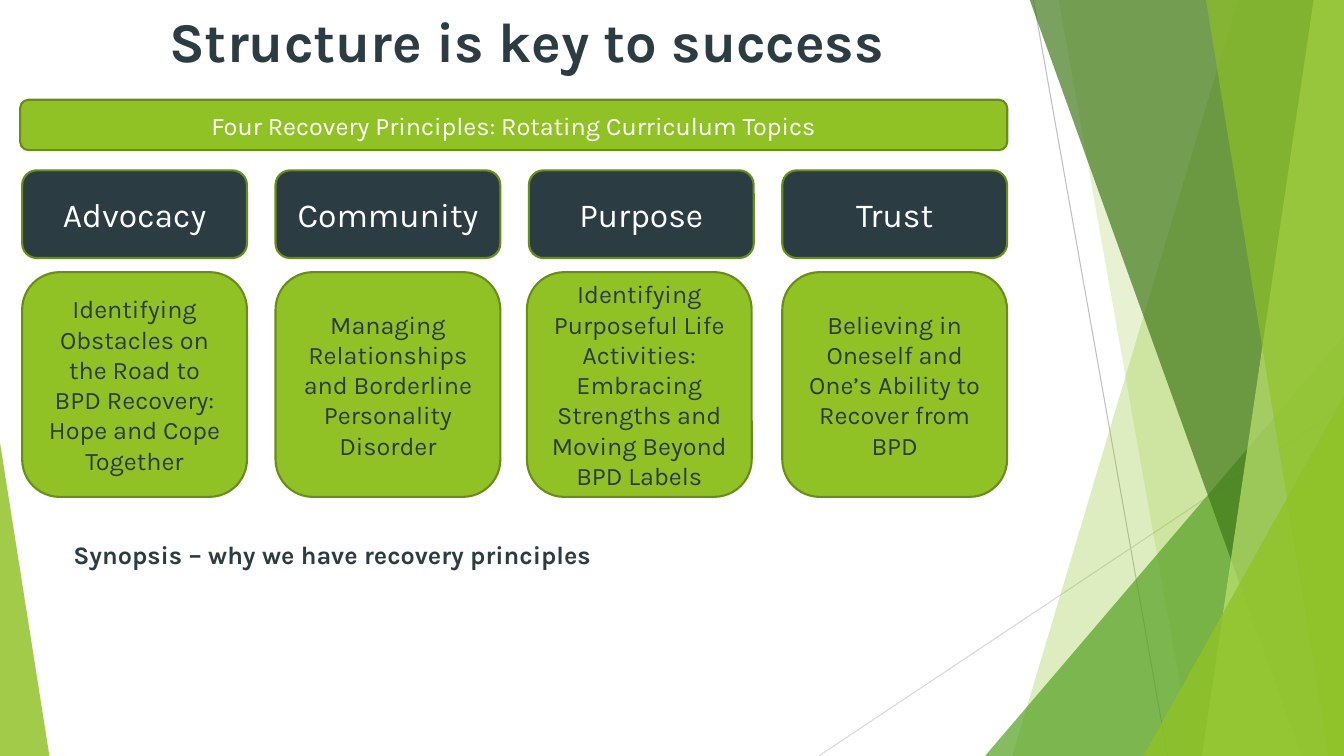
import dataclasses

import lxml.etree
import pptx
import pptx.dml.color
import pptx.enum.shapes
import pptx.enum.text
import pptx.oxml.ns
import pptx.shapes.autoshape
import pptx.shapes.base
import pptx.slide
import pptx.text.text
import pptx.util

SLIDE_WIDTH = pptx.util.Inches(13.33)
SLIDE_HEIGHT = pptx.util.Inches(7.5)
COLUMN = SLIDE_WIDTH / 133.3
ROW = SLIDE_HEIGHT / 75
RIGHT_EDGE = 133.3
TOP_EDGE = -0.1
BOTTOM_EDGE = 75
FIRST_CARD = 2.2
CARD_PITCH = 25.13
CARD_WIDTH = 22.3
FONT = "Karla"
COLORS = {
    "slate": "2C3C43",
    "lime": "90C226",
    "olive": "698D1B",
    "pale": "BFE471",
    "grass": "54A021",
    "forest": "3F7818",
    "white": "FFFFFF",
    "silver": "BFBFBF",
    "mist": "D8D8D8",
}
Shape = pptx.enum.shapes.MSO_SHAPE
Align = pptx.enum.text.PP_ALIGN
Anchor = pptx.enum.text.MSO_ANCHOR


@dataclasses.dataclass(frozen=True)
class Area:
    column: float
    row: float
    columns: float
    rows: float

    def emu(self) -> tuple[int, int, int, int]:
        return (
            round(self.column * COLUMN),
            round(self.row * ROW),
            round(self.columns * COLUMN),
            round(self.rows * ROW),
        )


@dataclasses.dataclass(frozen=True)
class Hairline:
    start: tuple[float, float]
    end: tuple[float, float]
    color: str


@dataclasses.dataclass(frozen=True)
class Band:
    top: float
    bottom: float
    color: str
    opacity: int


@dataclasses.dataclass(frozen=True)
class Wedge:
    area: Area
    apex: float
    color: str
    opacity: int


@dataclasses.dataclass(frozen=True)
class Lettering:
    size: int
    color: str
    bold: bool = False
    align: pptx.enum.text.PP_ALIGN = Align.CENTER
    anchor: pptx.enum.text.MSO_ANCHOR = Anchor.MIDDLE


@dataclasses.dataclass(frozen=True)
class Principle:
    name: str
    topic: str
    topic_shift: float = 0


HAIRLINES = [
    Hairline((102.5, 0), (115.8, 75), "silver"),
    Hairline((133.3, 40.3), (81.2, 75), "mist"),
]
FACETS = [
    Band(122.8, 100.4, "lime", 29),
    Band(105, 118.3, "lime", 20),
    Wedge(Area(97.7, 33.3, 35.6, 41.7), 1, "grass", 71),
    Band(102.1, 129.1, "forest", 69),
    Band(130.3, 119.2, "pale", 69),
    Band(119.6, 131.8, "lime", 64),
    Wedge(Area(113.4, 39.3, 19.9, 35.7), 1, "lime", 80),
    Wedge(Area(0, 43.9, 4.9, 31.1), 0, "lime", 84),
]
PRINCIPLES = [
    Principle(
        "Advocacy",
        "Identifying Obstacles on the Road to BPD Recovery: Hope and Cope Together",
    ),
    Principle(
        "Community",
        "Managing Relationships and Borderline Personality Disorder",
    ),
    Principle(
        "Purpose",
        "Identifying Purposeful Life Activities: Embracing Strengths and Moving Beyond BPD Labels",
        -0.2,
    ),
    Principle("Trust", "Believing in Oneself and One’s Ability to Recover from BPD"),
]


def rgb(color: str) -> pptx.dml.color.RGBColor:
    return pptx.dml.color.RGBColor.from_string(COLORS[color])


def write(frame: pptx.text.text.TextFrame, text: str, lettering: Lettering) -> None:
    frame.word_wrap = True
    frame.auto_size = pptx.enum.text.MSO_AUTO_SIZE.NONE
    frame.vertical_anchor = lettering.anchor
    paragraph = frame.paragraphs[0]
    paragraph.alignment = lettering.align
    run = paragraph.add_run()
    run.text = text
    run.font.name = FONT
    run.font.size = pptx.util.Pt(lettering.size)
    run.font.bold = lettering.bold
    run.font.color.rgb = rgb(lettering.color)


def draw_hairline(slide: pptx.slide.Slide, hairline: Hairline) -> None:
    ends = [
        round(share)
        for column, row in (hairline.start, hairline.end)
        for share in (column * COLUMN, row * ROW)
    ]
    connector = slide.shapes.add_connector(
        pptx.enum.shapes.MSO_CONNECTOR.STRAIGHT, *ends
    )
    connector.line.color.rgb = rgb(hairline.color)
    connector.line.width = pptx.util.Pt(0.75)
    lxml.etree.SubElement(connector.element.spPr, pptx.oxml.ns.qn("a:effectLst"))


def tint(facet: pptx.shapes.autoshape.Shape, color: str, opacity: int) -> None:
    facet.shadow.inherit = False
    facet.line.fill.background()
    facet.fill.solid()
    facet.fill.fore_color.rgb = rgb(color)
    solid = facet.element.spPr.find(pptx.oxml.ns.qn("a:solidFill"))
    alpha = lxml.etree.SubElement(solid[0], pptx.oxml.ns.qn("a:alpha"))
    alpha.set("val", str(opacity * 1000))


def draw_band(slide: pptx.slide.Slide, band: Band) -> None:
    corners = [
        (column * COLUMN, row * ROW)
        for column, row in (
            (band.top, TOP_EDGE),
            (RIGHT_EDGE, TOP_EDGE),
            (RIGHT_EDGE, BOTTOM_EDGE),
            (band.bottom, BOTTOM_EDGE),
        )
    ]
    outline = slide.shapes.build_freeform(*corners[0])
    outline.add_line_segments(corners[1:], close=True)
    tint(outline.convert_to_shape(), band.color, band.opacity)


def draw_wedge(slide: pptx.slide.Slide, wedge: Wedge) -> None:
    triangle = slide.shapes.add_shape(Shape.ISOSCELES_TRIANGLE, *wedge.area.emu())
    triangle.adjustments[0] = wedge.apex
    tint(triangle, wedge.color, wedge.opacity)


def draw_card(
    slide: pptx.slide.Slide, area: Area, fill: str, text: str, lettering: Lettering
) -> None:
    card = slide.shapes.add_shape(Shape.ROUNDED_RECTANGLE, *area.emu())
    card.shadow.inherit = False
    card.fill.solid()
    card.fill.fore_color.rgb = rgb(fill)
    card.line.color.rgb = rgb("olive")
    card.line.width = pptx.util.Pt(1.5)
    write(card.text_frame, text, lettering)


def main() -> None:
    deck = pptx.Presentation()
    deck.slide_width, deck.slide_height = SLIDE_WIDTH, SLIDE_HEIGHT
    slide = deck.slides.add_slide(deck.slide_layouts.get_by_name("Title Only"))

    for hairline in HAIRLINES:
        draw_hairline(slide, hairline)
    for facet in FACETS:
        if isinstance(facet, Band):
            draw_band(slide, facet)
        else:
            draw_wedge(slide, facet)

    headline = slide.shapes.title
    headline.left, headline.top, headline.width, headline.height = Area(
        6.3, 0.1, 91.9, 7.7
    ).emu()
    write(
        headline.text_frame,
        "Structure is key to success",
        Lettering(40, "slate", bold=True, anchor=Anchor.TOP),
    )

    draw_card(
        slide,
        Area(2, 9.9, 97.9, 5),
        "lime",
        "Four Recovery Principles: Rotating Curriculum Topics",
        Lettering(18, "white"),
    )
    for index, principle in enumerate(PRINCIPLES):
        column = FIRST_CARD + index * CARD_PITCH
        name_area = Area(column, 16.9, CARD_WIDTH, 8.7)
        topic_area = Area(column + principle.topic_shift, 27, CARD_WIDTH, 22.3)
        draw_card(slide, name_area, "slate", principle.name, Lettering(24, "white"))
        draw_card(slide, topic_area, "lime", principle.topic, Lettering(18, "slate"))

    synopsis = slide.shapes.add_textbox(*Area(6.3, 53, 95.3, 7.1).emu())
    write(
        synopsis.text_frame,
        "Synopsis – why we have recovery principles",
        Lettering(18, "slate", bold=True, align=Align.LEFT, anchor=Anchor.TOP),
    )
    deck.save("out.pptx")


if __name__ == "__main__":
    main()
